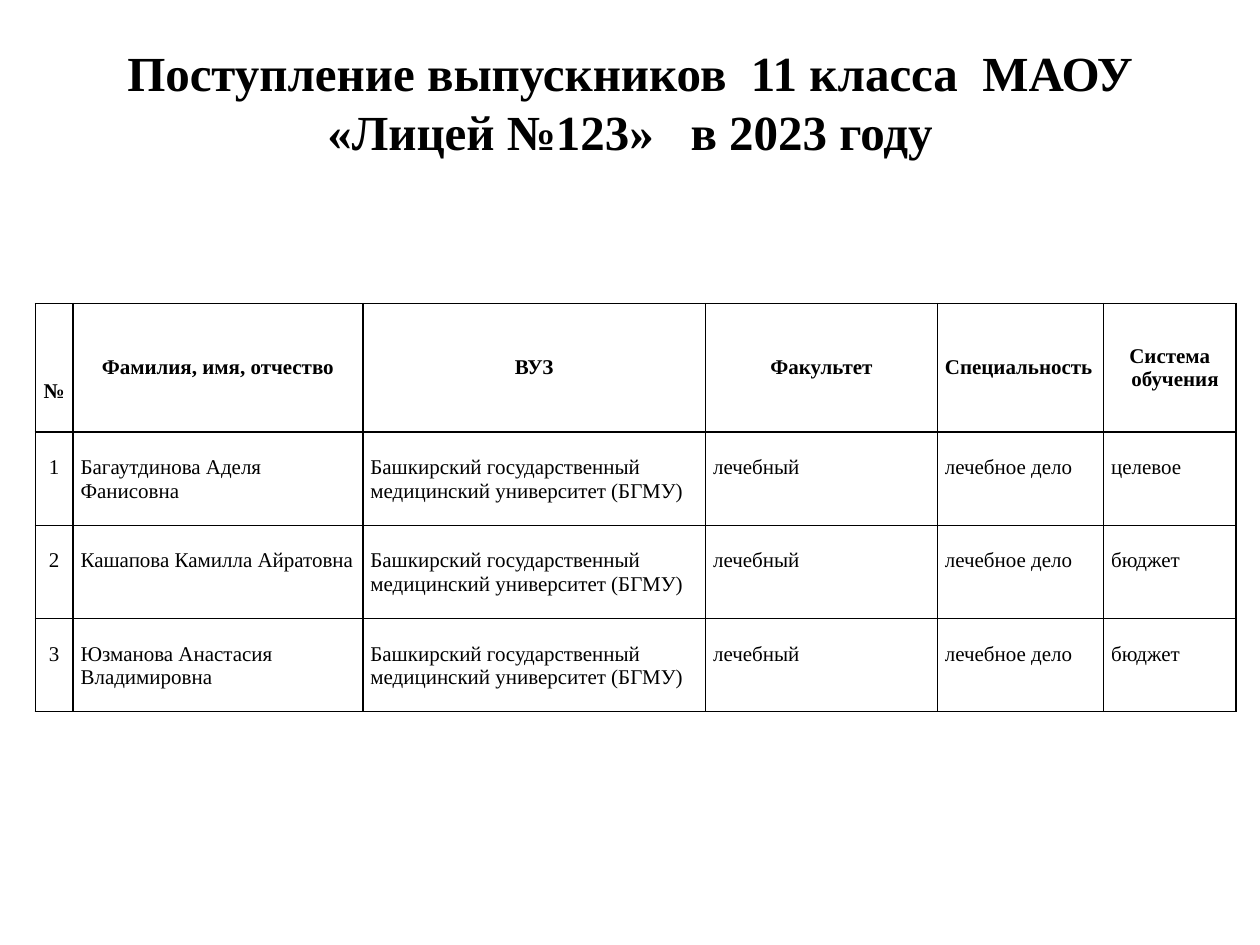
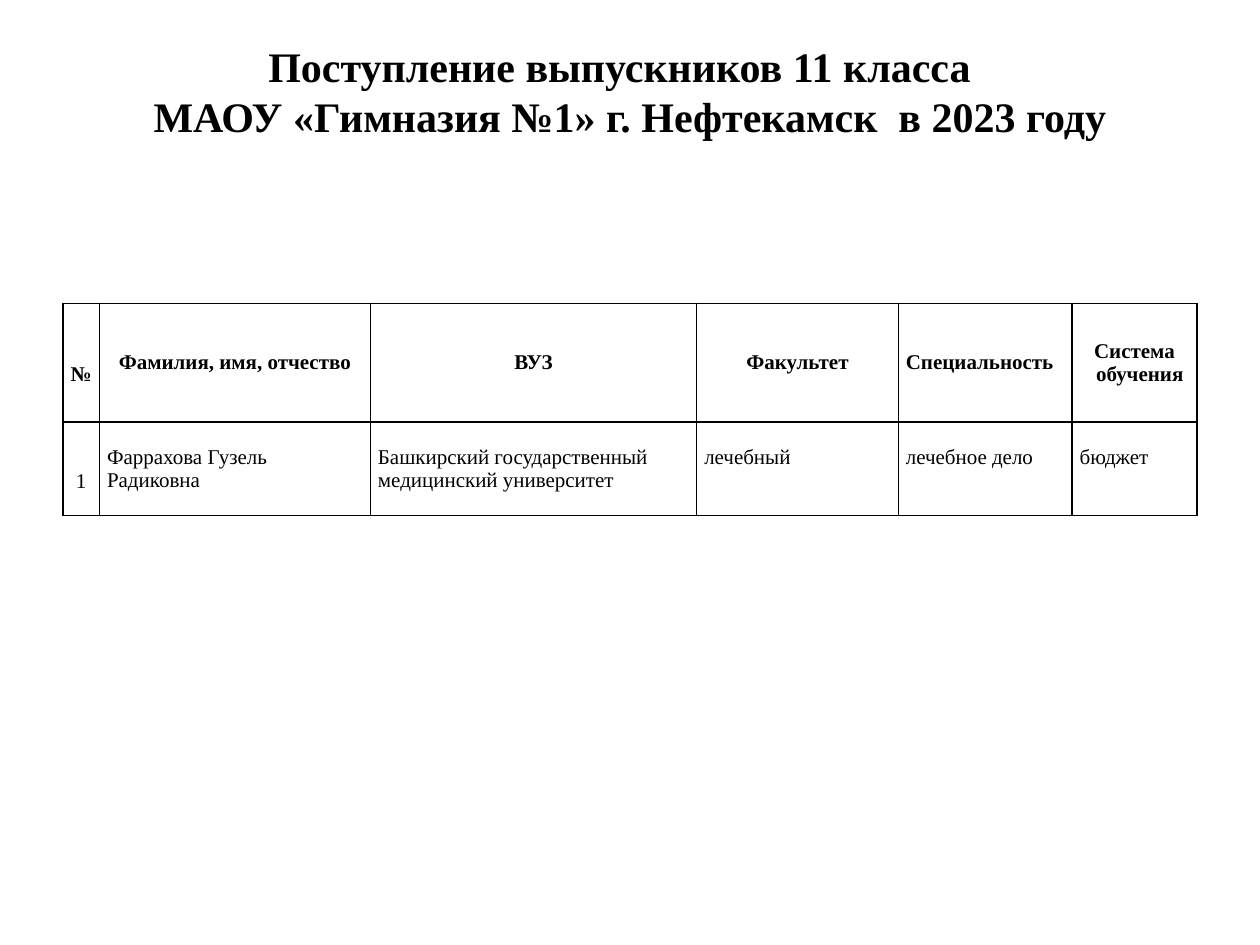
import pptx
import pptx.dml.color
import pptx.enum.text
import pptx.oxml
import pptx.oxml.ns
import pptx.util

ALIGN = pptx.enum.text.PP_ALIGN
MIDDLE = pptx.enum.text.MSO_ANCHOR.MIDDLE
TOP = pptx.enum.text.MSO_ANCHOR.TOP
BLACK = pptx.dml.color.RGBColor(0, 0, 0)
FONT = "Times New Roman"
SLIDE_W, SLIDE_H = pptx.util.Inches(10), pptx.util.Inches(7.5)
TABLE_SIZE = 12
TABLE_TOP = 2.41
CELL_INSET = 0.06
LINE = 0.19
ROW_HEIGHT = 0.74

HEADINGS = [["№"], ["Фамилия, имя, отчество"], ["ВУЗ"], ["Факультет"],
            ["Специальность"], ["Система", "обучения"]]
HEADING_ALIGN = [ALIGN.CENTER] * 4 + [ALIGN.LEFT, ALIGN.CENTER]
BODY_ALIGN = [ALIGN.CENTER] + [ALIGN.LEFT] * 4 + [ALIGN.JUSTIFY]
UNIVERSITY = "Башкирский государственный медицинский университет"
FACULTY = "лечебный"
SPECIALITY = "лечебное дело"


def write(frame, lines, size, align, bold):
    """Write one paragraph per line in the shared typeface."""
    frame.text = "\n".join(lines)
    for paragraph in frame.paragraphs:
        paragraph.alignment = align
        font = paragraph.font
        font.name, font.size, font.bold = FONT, pptx.util.Pt(size), bold
        font.color.rgb = BLACK


def indent(paragraph, side, points):
    """Set the left (marL) or right (marR) margin of a paragraph."""
    properties = paragraph._p.get_or_add_pPr()
    properties.set(side, str(pptx.util.Pt(points)))
    properties.set("indent", "0")


def outline(cell):
    """Draw a thin black border on all sides of a cell and clear its fill."""
    properties = cell._tc.get_or_add_tcPr()
    for side in ("lnL", "lnR", "lnT", "lnB"):
        properties.append(pptx.oxml.parse_xml(
            f'<a:{side} {pptx.oxml.ns.nsdecls("a")} w="{pptx.util.Pt(1)}">'
            f'<a:solidFill><a:srgbClr val="{BLACK}"/></a:solidFill></a:{side}>'))
    cell.fill.background()


def fill_cell(cell, lines, align, heading, lines_above):
    """Fill one cell, leaving the given number of text lines free above."""
    write(cell.text_frame, lines, TABLE_SIZE, align, heading)
    cell.vertical_anchor = MIDDLE if heading else TOP
    cell.margin_left = cell.margin_right = pptx.util.Inches(CELL_INSET)
    cell.margin_top = pptx.util.Inches(lines_above * LINE)
    cell.margin_bottom = 0
    outline(cell)


def add_title(slide, lines, size, height, lines_below):
    """Place the slide title, leaving text lines free below it."""
    title = slide.shapes.title
    title.left, title.top = int(SLIDE_W * 0.05), int(SLIDE_H * 0.04)
    title.width, title.height = int(SLIDE_W * 0.9), pptx.util.Inches(height)
    frame = title.text_frame
    write(frame, lines, size, ALIGN.CENTER, True)
    frame.auto_size = pptx.enum.text.MSO_AUTO_SIZE.NONE
    frame.vertical_anchor = MIDDLE
    frame.margin_bottom = pptx.util.Inches(0.05) + int(pptx.util.Pt(size * 1.15) * lines_below)
    return frame


def add_admissions(slide, left, columns, heading_height, number_lines, graduates):
    """Draw the admissions table; number_lines gives the free lines above numbers."""
    heights = [heading_height] + [ROW_HEIGHT] * len(graduates)
    table = slide.shapes.add_table(
        len(heights), len(columns), pptx.util.Inches(left), pptx.util.Inches(TABLE_TOP),
        pptx.util.Inches(sum(columns)), pptx.util.Inches(sum(heights))).table
    table.first_row = table.horz_banding = False
    for column, width in zip(table.columns, columns):
        column.width = pptx.util.Inches(width)
    for row, height in zip(table.rows, heights):
        row.height = pptx.util.Inches(height)

    heading_above, body_above = number_lines
    for index, lines in enumerate(HEADINGS):
        fill_cell(table.cell(0, index), lines, HEADING_ALIGN[index], True,
                  0 if index else heading_above)
    indent(table.cell(0, 5).text_frame.paragraphs[1], "marL", 6)

    for number, (name, university, funding) in enumerate(graduates, 1):
        values = [str(number), name, university, FACULTY, SPECIALITY, funding]
        for index, value in enumerate(values):
            fill_cell(table.cell(number, index), [value], BODY_ALIGN[index], False,
                      1 if index else body_above)


def lyceum_slide(slide):
    """Build the slide on the lyceum graduates."""
    add_title(slide, ["Поступление выпускников  11 класса  МАОУ «Лицей №123»   в 2023 году"],
              28, 1.01, 0)
    university = f"{UNIVERSITY} (БГМУ)"
    add_admissions(slide, 0.28, [0.3, 2.3, 2.72, 1.84, 1.32, 1.05], 1.02, (2, 1), [
        ("Багаутдинова Аделя Фанисовна", university, "целевое"),
        ("Кашапова Камилла Айратовна", university, "бюджет"),
        ("Юзманова Анастасия Владимировна", university, "бюджет")])


def gymnasium_slide(slide):
    """Build the slide on the gymnasium graduates."""
    frame = add_title(slide, ["Поступление выпускников 11 класса",
                              "МАОУ «Гимназия №1» г. Нефтекамск  в 2023 году"], 24, 1.22, 1)
    for paragraph, margin in zip(frame.paragraphs, (12, 0)):
        indent(paragraph, "marR", margin)
    add_admissions(slide, 0.5, [0.29, 2.15, 2.59, 1.6, 1.38, 0.99], 0.94, (1, 2), [
        ("Фаррахова Гузель Радиковна", UNIVERSITY, "бюджет")])


def main():
    """Build and save the presentation."""
    deck = pptx.Presentation()
    deck.slide_width, deck.slide_height = SLIDE_W, SLIDE_H
    for build in (lyceum_slide, gymnasium_slide):
        build(deck.slides.add_slide(deck.slide_layouts[5]))
    deck.save("out.pptx")


if __name__ == "__main__":
    main()
